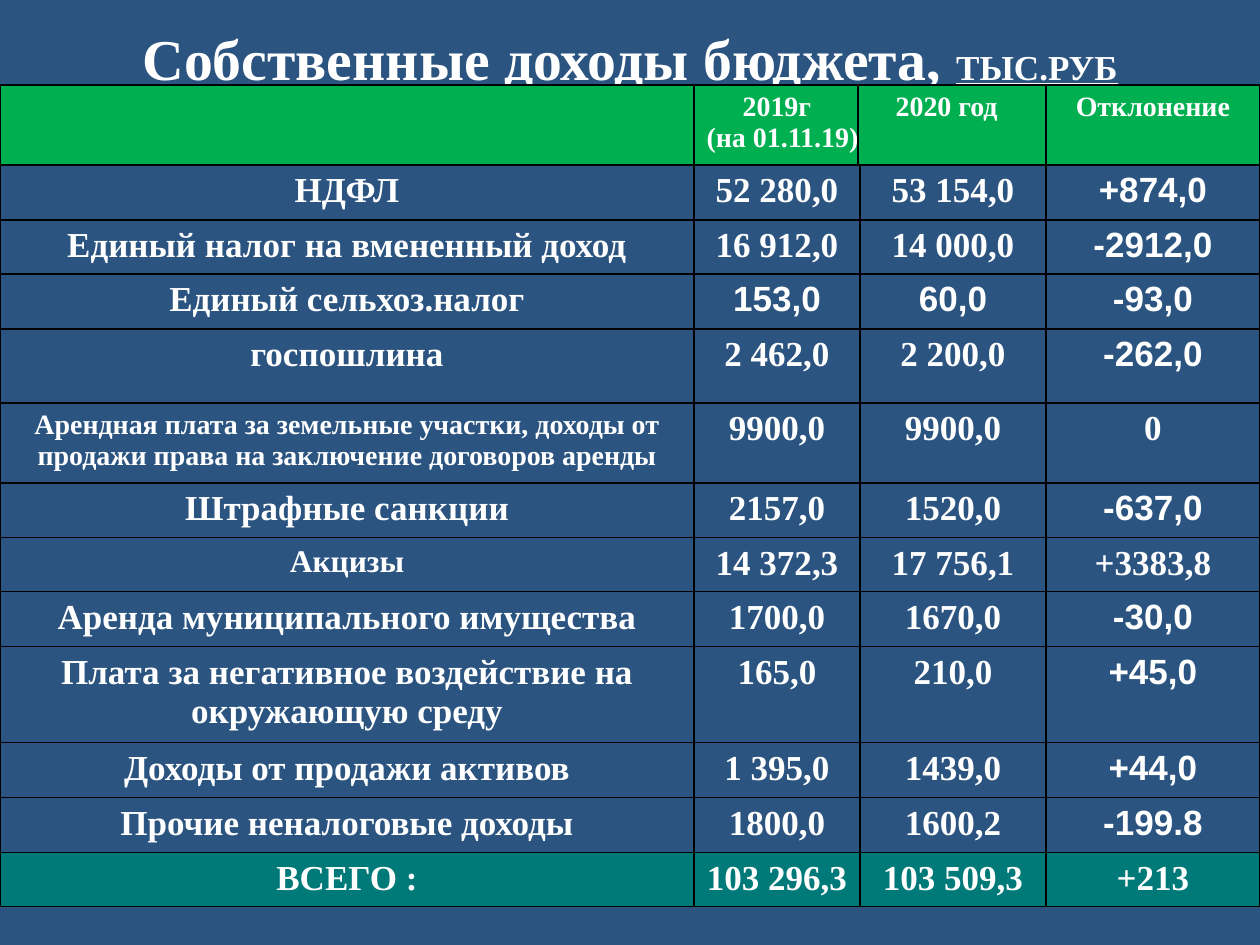
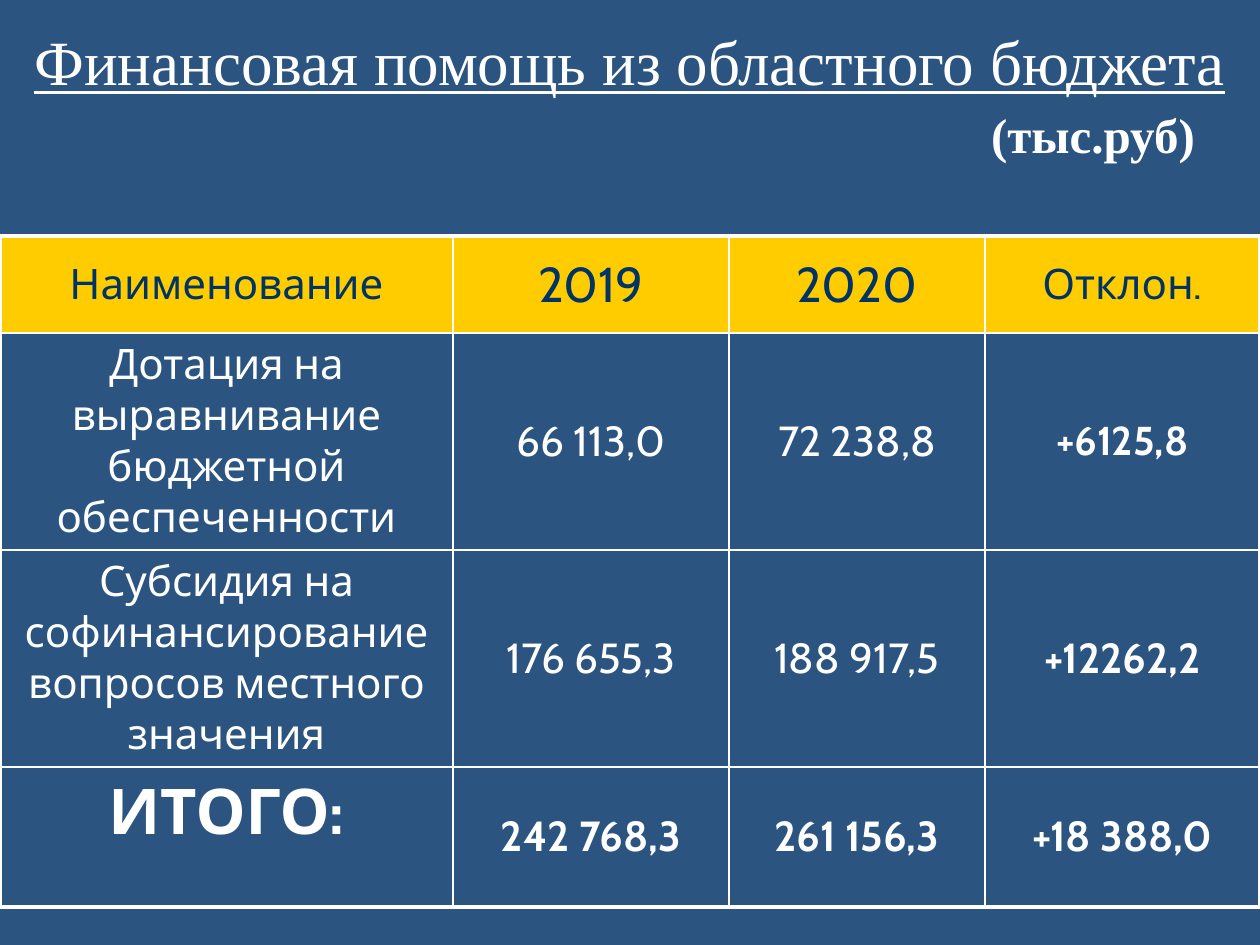
from lxml import etree
from pptx import Presentation
from pptx.dml.color import RGBColor
from pptx.enum.shapes import MSO_CONNECTOR
from pptx.enum.text import MSO_ANCHOR, MSO_AUTO_SIZE, PP_ALIGN
from pptx.oxml.ns import qn
from pptx.util import Emu, Pt

STRAIGHT = MSO_CONNECTOR.STRAIGHT
TOP, MIDDLE = MSO_ANCHOR.TOP, MSO_ANCHOR.MIDDLE
LEFT, CENTER = PP_ALIGN.LEFT, PP_ALIGN.CENTER
NO_FIT = MSO_AUTO_SIZE.NONE

EMU_PER_PX = 914400 / 126
SLIDE_WIDTH, SLIDE_HEIGHT = 1260, 945
TITLE_ONLY = 5
SERIF, SANS, CABIN = "Times New Roman", "Arial", "Cabin"
COLORS = {
    "background": "2B5481", "white": "FFFFFF", "black": "000000",
    "green": "00B050", "teal": "007979", "yellow": "FFCC00", "navy": "003366",
}

# Name, 2019, 2020, deviation, size of the name, columns set in Arial
INCOME = [
    ("НДФЛ", "52 280,0", "53 154,0", "+874,0", 20, (3,)),
    ("Единый налог на вмененный доход", "16 912,0", "14 000,0", "-2912,0", 20, (3,)),
    ("Единый сельхоз.налог", "153,0", "60,0", "-93,0", 20, (1, 2, 3)),
    ("госпошлина", "2 462,0", "2 200,0", "-262,0", 20, (3,)),
    ("Арендная плата за земельные участки, доходы от продажи права "
     "на заключение договоров аренды", "9900,0", "9900,0", "0", 16, ()),
    ("Штрафные санкции", "2157,0", "1520,0", "-637,0", 20, (3,)),
    ("Акцизы", "14 372,3", "17 756,1", "+3383,8", 18, ()),
    ("Аренда муниципального имущества", "1700,0", "1670,0", "-30,0", 20, (3,)),
    ("Плата за негативное воздействие на окружающую среду",
     "165,0", "210,0", "+45,0", 20, (3,)),
    ("Доходы от продажи активов", "1 395,0", "1439,0", "+44,0", 20, (3,)),
    ("Прочие неналоговые доходы", "1800,0", "1600,2", "-199.8", 20, (3,)),
    ("ВСЕГО :", "103 296,3", "103 509,3", "+213", 20, ()),
]
INCOME_COLUMNS = [694, 166, 186, 214]
INCOME_ROWS = [80, 55, 54, 55, 74, 80, 55, 54, 55, 96, 55, 55, 54]

AID = [
    ("Наименование", "2019", "2020", "Отклон."),
    ("Дотация на выравнивание бюджетной обеспеченности",
     "66 113,0", "72 238,8", "+6125,8"),
    ("Субсидия на софинансирование вопросов местного значения",
     "176 655,3", "188 917,5", "+12262,2"),
    ("ИТОГО:", "242 768,3", "261 156,3", "+18 388,0"),
]
AID_COLUMNS = [453, 276, 256, 275]
AID_ROWS = [97, 217, 217, 140]


def px(length):
    return Emu(round(length * EMU_PER_PX))


def rgb(name):
    return RGBColor.from_string(COLORS[name])


def set_font(font, face, size, color="white", bold=False, underline=None):
    font.name, font.size, font.bold = face, Pt(size), bold
    font.underline = underline
    font.color.rgb = rgb(color)


def place(shape, left, top, width, height):
    shape.left, shape.top = px(left), px(top)
    shape.width, shape.height = px(width), px(height)


def add_titled_slide(deck, spans, height, bold):
    """Add a slide whose title is made of (text, size) spans."""
    page = deck.slides.add_slide(deck.slide_layouts[TITLE_ONLY])
    title = page.shapes.title
    place(title, 0, 16, SLIDE_WIDTH, height)
    frame = title.text_frame
    frame.auto_size, frame.vertical_anchor = NO_FIT, TOP
    para = frame.paragraphs[0]
    para.alignment = CENTER
    for text, size in spans:
        span = para.add_run()
        span.text = text
        set_font(span.font, SERIF, size, bold=bold, underline=True)
    return page


def add_grid(page, top, columns, rows):
    frame = page.shapes.add_table(len(rows), len(columns), 0, px(top),
                                  px(sum(columns)), px(sum(rows)))
    table = frame.table
    table.first_row = table.horz_banding = False
    for column, width in zip(table.columns, columns):
        column.width = px(width)
    for row, height in zip(table.rows, rows):
        row.height = px(height)
    return table


def style_grid(table, color, outer, fills):
    """Rule every cell 1 pt inside and `outer` pt at the edge; fill rows by index."""
    last_row, last_column = len(table.rows) - 1, len(table.columns) - 1
    for r in range(last_row + 1):
        for c in range(last_column + 1):
            cell = table.cell(r, c)
            edges = {"a:lnL": c == 0, "a:lnR": c == last_column,
                     "a:lnT": r == 0, "a:lnB": r == last_row}
            for tag, at_edge in edges.items():
                add_border(cell, tag, color, outer if at_edge else 1)
            if r in fills:
                cell.fill.solid()
                cell.fill.fore_color.rgb = rgb(fills[r])
            else:
                cell.fill.background()


def add_border(cell, tag, color, width):
    properties = cell._tc.get_or_add_tcPr()
    line = etree.SubElement(properties, qn(tag), w=str(Pt(width)))
    solid = etree.SubElement(line, qn("a:solidFill"))
    etree.SubElement(solid, qn("a:srgbClr"), val=COLORS[color])


def write(para, text, face, size, color="white", bold=False, align=CENTER):
    para.text = text
    para.alignment = align
    set_font(para.font, face, size, color, bold)
    for span in para.runs:
        set_font(span.font, face, size, color, bold)


def add_tabs(para, positions):
    tabs = etree.SubElement(para._p.get_or_add_pPr(), qn("a:tabLst"))
    for position in positions:
        etree.SubElement(tabs, qn("a:tab"), pos=str(px(position)), algn="l")


def add_divider(page, x, top, bottom):
    line = page.shapes.add_connector(STRAIGHT, px(x), px(bottom), px(x), px(top))
    line.line.color.rgb = rgb("black")
    line.line.width = Pt(0.75)
    etree.SubElement(line._element.spPr, qn("a:effectLst"))


def fill_income_header(table):
    years = table.cell(0, 1)
    years.merge(table.cell(0, 2))
    frame = years.text_frame
    first, second = frame.paragraphs[0], frame.add_paragraph()
    add_tabs(first, (36, 189))
    write(first, "\t2019г\t2020 год", SERIF, 16, bold=True, align=LEFT)
    write(second, "(на 01.11.19)", SERIF, 16, bold=True, align=LEFT)
    deviation = table.cell(0, 3).text_frame.paragraphs[0]
    write(deviation, "Отклонение", SERIF, 16, bold=True)


def build_income(deck):
    page = add_titled_slide(
        deck, [("Собственные доходы бюджета, ", 33), ("ТЫС.РУБ", 20)], 83, True)
    top = 85
    table = add_grid(page, top, INCOME_COLUMNS, INCOME_ROWS)
    style_grid(table, "black", 1, {0: "green", len(INCOME): "teal"})
    fill_income_header(table)
    for r, (*texts, name_size, arial_columns) in enumerate(INCOME, 1):
        for c, text in enumerate(texts):
            face = SANS if c in arial_columns else SERIF
            size = name_size if c == 0 else 20
            write(table.cell(r, c).text_frame.paragraphs[0], text, face, size, bold=True)
    add_divider(page, 858, top, top + INCOME_ROWS[0] - 1)


def build_aid(deck):
    page = add_titled_slide(
        deck, [("Финансовая помощь из областного бюджета", 36)], 89, False)
    table = add_grid(page, 236, AID_COLUMNS, AID_ROWS)
    style_grid(table, "white", 2.25, {0: "yellow"})
    sizes = {(0, 1): 28, (0, 2): 28, (1, 3): 23, (3, 0): 36}
    for r, texts in enumerate(AID):
        for c, text in enumerate(texts):
            cell = table.cell(r, c)
            header, total = r == 0, r == len(AID) - 1
            if header:
                cell.margin_left = cell.margin_right = 0
                cell.margin_top = cell.margin_bottom = 0
            cell.vertical_anchor = MIDDLE if header or c > 0 else TOP
            write(cell.text_frame.paragraphs[0], text, CABIN, sizes.get((r, c), 24),
                  "navy" if header else "white",
                  bold=total or (c == 3 and not header))

    # Unit of measure
    box = page.shapes.add_textbox(px(965), px(98), px(256), px(72))
    box.text_frame.word_wrap = True
    write(box.text_frame.paragraphs[0], "(тыс.руб)", SERIF, 28, bold=True)


def main():
    deck = Presentation()
    deck.slide_width, deck.slide_height = px(SLIDE_WIDTH), px(SLIDE_HEIGHT)
    background = deck.slide_master.background.fill
    background.solid()
    background.fore_color.rgb = rgb("background")
    build_income(deck)
    build_aid(deck)
    deck.save("out.pptx")


if __name__ == "__main__":
    main()
